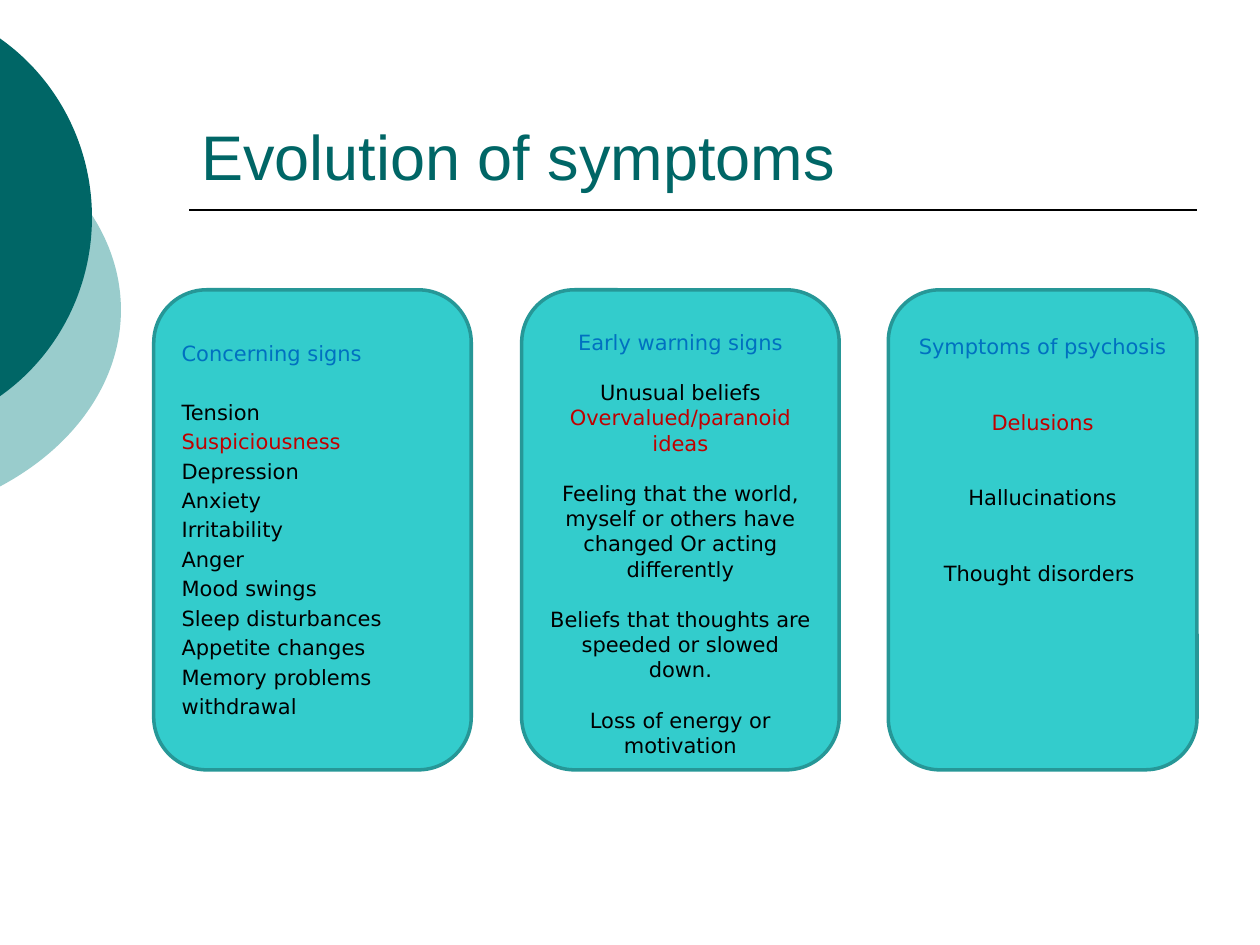
from dataclasses import dataclass

from lxml import etree
from pptx import Presentation
from pptx.dml.color import RGBColor
from pptx.enum.shapes import MSO_CONNECTOR, MSO_SHAPE
from pptx.enum.text import MSO_ANCHOR, PP_ALIGN
from pptx.oxml.ns import qn
from pptx.util import Inches, Pt

ROUNDED, OVAL = MSO_SHAPE.ROUNDED_RECTANGLE, MSO_SHAPE.OVAL
STRAIGHT = MSO_CONNECTOR.STRAIGHT
TOP, BOTTOM = MSO_ANCHOR.TOP, MSO_ANCHOR.BOTTOM
LEFT, CENTER = PP_ALIGN.LEFT, PP_ALIGN.CENTER

COLORS = {
    "dark": "006666", "pale": "99CCCC", "card": "33CCCC", "edge": "269797",
    "heading": "0070C0", "alert": "C00000", "text": "000000",
}


@dataclass
class Item:
    text: str
    color: str = "text"
    before: float = 0


@dataclass
class Card:
    left: float
    width: float
    inset: float
    align: PP_ALIGN
    items: list[Item]


@dataclass
class Disc:
    left: float
    top: float
    width: float
    height: float
    color: str


DISCS = [
    Disc(-3.54, 0.75, 4.5, 3.42, "pale"),
    Disc(-2.65, 0, 3.38, 3.45, "dark"),
]

CARDS = [
    Card(4.14, 2.52, 0.19, CENTER, [
        Item("Early warning signs", "heading"),
        Item("Unusual beliefs", before=14.4),
        Item("Overvalued/paranoid ideas", "alert"),
        *(Item(text, before=14.4) for text in (
            "Feeling that the world, myself or others have changed "
            "Or acting differently",
            "Beliefs that thoughts are speeded or slowed down.",
            "Loss of energy or motivation")),
    ]),
    Card(1.22, 2.52, 0.28, LEFT, [
        Item("Concerning signs", "heading"),
        Item("Tension", before=19.2),
        Item("Suspiciousness", "alert", 2.4),
        *(Item(text, before=2.4) for text in (
            "Depression", "Anxiety", "Irritability", "Anger", "Mood swings",
            "Sleep disturbances", "Appetite changes", "Memory problems",
            "withdrawal")),
    ]),
    Card(7.05, 2.45, 0.23, CENTER, [
        Item("Symptoms of psychosis", "heading"),
        Item("Delusions", "alert", 28.8),
        Item("Hallucinations", before=28.8),
        Item("Thought disorders ", before=28.8),
    ]),
]


def rgb(name: str) -> RGBColor:
    """Return a named colour."""
    return RGBColor.from_string(COLORS[name])


def write(p, text: str, *, size: float = 12, font: str = "DejaVu Sans",
          color: str = "text", align: PP_ALIGN = LEFT, before: float = 0) -> None:
    """Write one formatted paragraph."""
    p.alignment = align
    p.space_before = Pt(before)
    r = p.add_run()
    r.text = text
    r.font.size = Pt(size)
    r.font.name = font
    r.font.color.rgb = rgb(color)


def add_filled(s, kind: MSO_SHAPE, left: float, top: float, width: float,
               height: float, color: str):
    """Add a flat preset shape with a solid fill."""
    sp = s.shapes.add_shape(
        kind, Inches(left), Inches(top), Inches(width), Inches(height))
    sp.shadow.inherit = False
    sp.fill.solid()
    sp.fill.fore_color.rgb = rgb(color)
    return sp


def draw_disc(s, disc: Disc) -> None:
    """Draw a disc that runs over the left slide edge."""
    sp = add_filled(
        s, OVAL, disc.left, disc.top, disc.width, disc.height, disc.color)
    sp.line.fill.background()


def draw_title(s, text: str) -> None:
    """Draw the title and the rule below it."""
    y = Inches(5 / 3)
    line = s.shapes.add_connector(STRAIGHT, Inches(1.5), y, Inches(9.5), y)
    line.line.color.rgb = rgb("text")
    line.line.width = Pt(1)
    etree.SubElement(line._element.spPr, qn("a:effectLst"))
    sp = s.shapes.add_textbox(Inches(1.5), Inches(0.33), Inches(8), Inches(1.25))
    tf = sp.text_frame
    tf.word_wrap = True
    tf.vertical_anchor = BOTTOM
    write(tf.paragraphs[0], text, size=36, font="Arial", color="dark")


def draw_card(s, card: Card) -> None:
    """Draw a rounded card with its heading and items."""
    sp = add_filled(s, ROUNDED, card.left, 2.3, card.width, 3.81, "card")
    sp.line.color.rgb = rgb("edge")
    sp.line.width = Pt(2)
    tf = sp.text_frame
    tf.word_wrap = True
    tf.vertical_anchor = TOP
    tf.margin_top = Inches(card.inset)
    for i, item in enumerate(card.items):
        p = tf.add_paragraph() if i else tf.paragraphs[0]
        write(p, item.text, color=item.color, align=card.align, before=item.before)


def main() -> None:
    """Build and save the slide."""
    prs = Presentation()
    prs.slide_width, prs.slide_height = Inches(10), Inches(7.5)
    s = prs.slides.add_slide(prs.slide_layouts[6])
    for disc in DISCS:
        draw_disc(s, disc)
    draw_title(s, "Evolution of symptoms")
    for card in CARDS:
        draw_card(s, card)
    prs.save("out.pptx")


if __name__ == "__main__":
    main()
